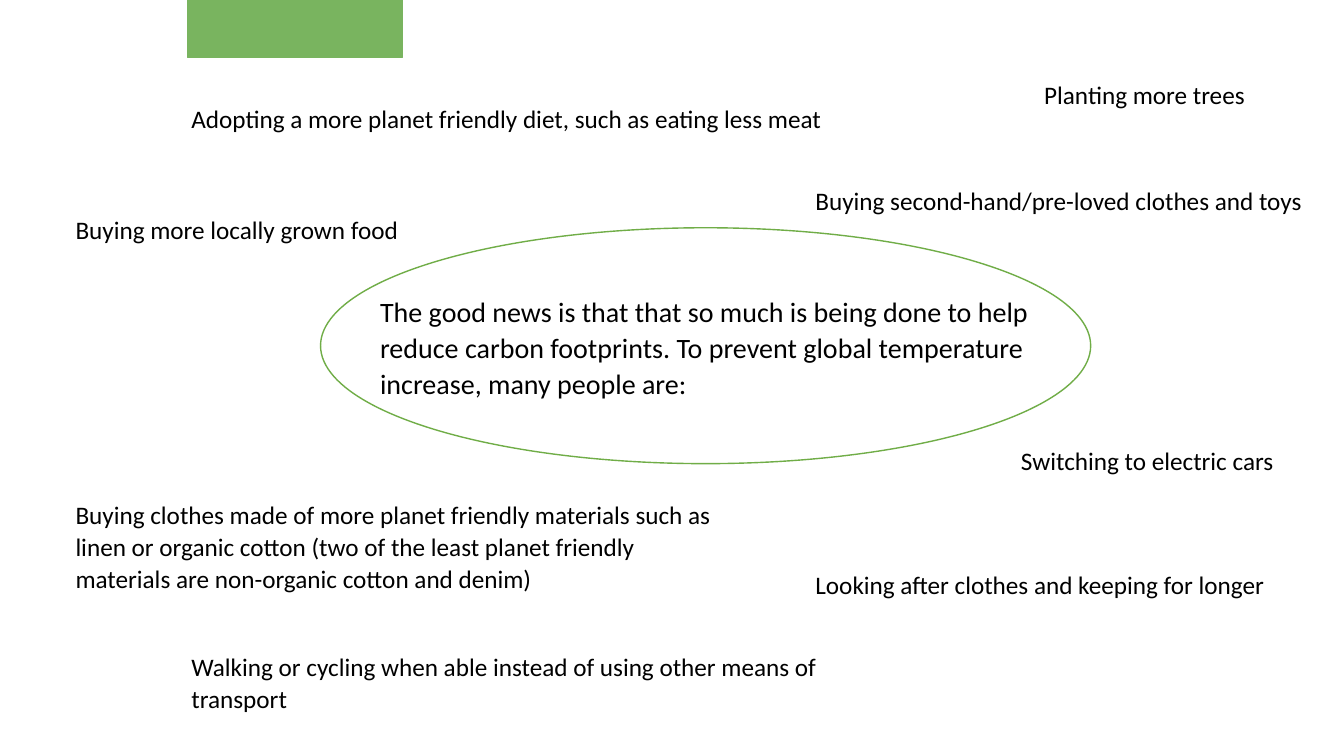
from pptx import Presentation
from pptx.dml.color import RGBColor
from pptx.enum.shapes import MSO_SHAPE as Shape
from pptx.enum.text import MSO_ANCHOR as Anchor, MSO_AUTO_SIZE as AutoSize, PP_ALIGN as Align
from pptx.util import Inches, Pt

WIDTH, HEIGHT = Inches(13.33), Inches(7.5)
COLORS = {"text": "000000", "paper": "FFFFFF", "outline": "70AD47", "tab": "79B45F"}
LEFT_EDGE, INDENT, RIGHT_COLUMN = 4.88, 13.5, 59.93
LINE, WIDE, WIDEST = 5.47, 50.03, 51.6

MESSAGE = ("The good news is that that so much is being done to help reduce carbon "
           "footprints. To prevent global temperature increase, many people are:")
ACTIONS = [
    ("Planting more trees", 76.95, 9.6, 17.63, LINE),
    ("Switching to electric cars", 75.23, 58, 21.23, LINE),
    ("Buying more locally grown food", LEFT_EDGE, 27.47, 26.33, LINE),
    ("Adopting a more planet friendly diet, such as eating less meat",
     INDENT, 12.67, WIDE, LINE),
    ("Buying second-hand/pre-loved clothes and toys", RIGHT_COLUMN, 23.6, WIDE, LINE),
    ("Buying clothes made of more planet friendly materials such as linen or organic "
     "cotton (two of the least planet friendly materials are non-organic cotton and denim)",
     LEFT_EDGE, 65.07, WIDE, 14.13),
    ("Looking after clothes and keeping for longer", RIGHT_COLUMN, 74.4, WIDEST, LINE),
    ("Walking or cycling when able instead of using other means of transport",
     INDENT, 85.2, WIDEST, 9.73),
]


def color(name):
    return RGBColor.from_string(COLORS[name])


def box(left, top, width, height):
    return (round(WIDTH * left / 100), round(HEIGHT * top / 100),
            round(WIDTH * width / 100), round(HEIGHT * height / 100))


def add_panel(slide, kind, place, fill, line):
    shape = slide.shapes.add_shape(kind, *box(*place))
    shape.shadow.inherit = False
    shape.fill.solid()
    shape.fill.fore_color.rgb = color(fill)
    shape.line.color.rgb = color(line)
    shape.line.width = Pt(1)
    return shape


def write(shape, text, size):
    text_frame = shape.text_frame
    text_frame.text = text
    text_frame.word_wrap = True
    text_frame.auto_size = AutoSize.SHAPE_TO_FIT_TEXT
    text_frame.vertical_anchor = Anchor.TOP
    paragraph = text_frame.paragraphs[0]
    paragraph.alignment = Align.LEFT
    paragraph.line_spacing = 1.07
    paragraph.space_before = Pt(0)
    font = paragraph.runs[0].font
    font.name = "Calibri"
    font.size = Pt(size)
    font.color.rgb = color("text")


def add_message(slide):
    title = slide.shapes.title
    title.left, title.top, title.width, title.height = box(27.53, 38, WIDE, 15.47)
    write(title, MESSAGE, 20)
    return title


def add_action(slide, text, *place):
    write(slide.shapes.add_textbox(*box(*place)), text, 18)


def main():
    presentation = Presentation()
    presentation.slide_width, presentation.slide_height = WIDTH, HEIGHT
    slide = presentation.slides.add_slide(presentation.slide_layouts.get_by_name("Title Only"))
    title = add_message(slide)
    ellipse = add_panel(slide, Shape.OVAL, (23.85, 30.13, 57.3, 31.2), "paper", "outline")
    title.element.addprevious(ellipse.element)
    add_panel(slide, Shape.RECTANGLE, (13.95, 0, 15.98, 7.6), "tab", "tab")
    for action in ACTIONS:
        add_action(slide, *action)
    presentation.save("out.pptx")


if __name__ == "__main__":
    main()
